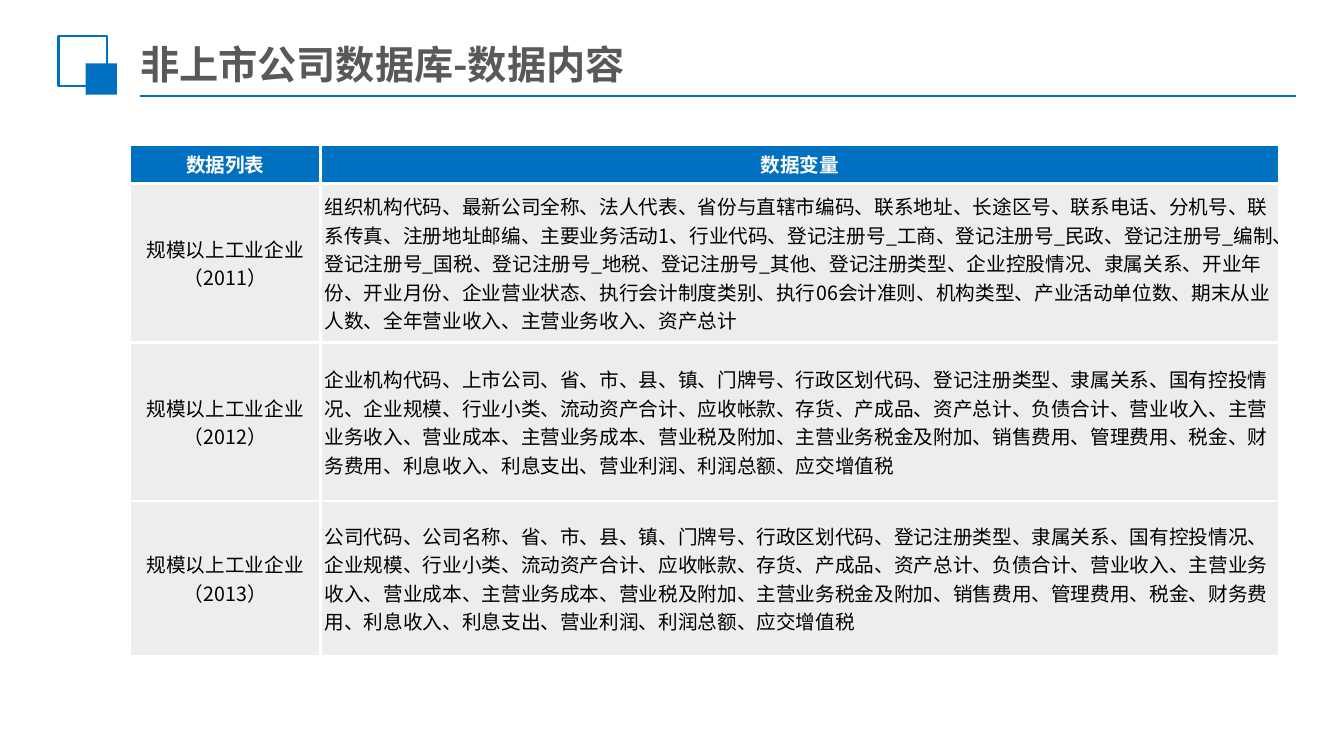
from lxml import etree
from pptx import Presentation, util as u
from pptx.dml.color import RGBColor
from pptx.enum import shapes, text
from pptx.oxml.ns import qn

COLORS = {"blue": "0070C0", "title": "595959", "body": "000000",
          "white": "FFFFFF", "band": "EDEDED"}
FONT = "Noto Sans CJK SC"


def style(paragraph, size, color, bold):
    for run in paragraph.runs:
        run.font.size = u.Pt(size)
        run.font.bold = bold
        run.font.name = FONT
        run.font.color.rgb = RGBColor.from_string(COLORS[color])
        latin = run._r.get_or_add_rPr().find(qn("a:latin"))
        east_asian = etree.Element(qn("a:ea"), typeface=FONT)
        latin.addnext(east_asian)


def white_borders(cell):
    props = cell._tc.get_or_add_tcPr()
    for place, side in enumerate(("lnL", "lnR", "lnT", "lnB")):
        border = etree.Element(qn("a:" + side), w=str(u.Pt(2.25)))
        fill = etree.SubElement(border, qn("a:solidFill"))
        etree.SubElement(fill, qn("a:srgbClr"), val=COLORS["white"])
        props.insert(place, border)


prs = Presentation()
prs.slide_width, prs.slide_height = u.Inches(13.33), u.Inches(7.5)
slide = prs.slides.add_slide(prs.slide_layouts[5])

rule = slide.shapes.add_connector(shapes.MSO_CONNECTOR.STRAIGHT, u.Inches(1.39),
                                  u.Inches(0.95), u.Inches(12.85), u.Inches(0.95))
rule.line.color.rgb = RGBColor.from_string(COLORS["blue"])
rule.line.width = u.Pt(1.25)
etree.SubElement(rule._element.spPr, qn("a:effectLst"))

for left, top, width, height, filled in ((0.58, 0.36, 0.48, 0.49, False),
                                         (0.85, 0.63, 0.31, 0.31, True)):
    square = slide.shapes.add_shape(shapes.MSO_SHAPE.RECTANGLE, u.Inches(left),
                                    u.Inches(top), u.Inches(width), u.Inches(height))
    square.shadow.inherit = False
    if filled:
        square.fill.solid()
        square.fill.fore_color.rgb = RGBColor.from_string(COLORS["blue"])
        square.line.fill.background()
    else:
        square.fill.background()
        square.line.color.rgb = RGBColor.from_string(COLORS["blue"])
        square.line.width = u.Pt(1.5)

title = slide.shapes.title
title.left, title.top = u.Inches(1.32), u.Inches(0.39)
title.width, title.height = u.Inches(8.6), u.Inches(0.48)
heading = title.text_frame
heading.text = "非上市公司数据库-数据内容"
heading.word_wrap = True
heading.auto_size = text.MSO_AUTO_SIZE.NONE
heading.vertical_anchor = text.MSO_ANCHOR.MIDDLE
heading.margin_left = heading.margin_right = u.Inches(0.07)
heading.margin_top = heading.margin_bottom = u.Inches(0.04)
heading.paragraphs[0].alignment = text.PP_ALIGN.LEFT
style(heading.paragraphs[0], 28, "title", True)

shared_variables = (
    "省、市、县、镇、门牌号、行政区划代码、登记注册类型、隶属关系、国有控投情况、"
    "企业规模、行业小类、流动资产合计、应收帐款、存货、产成品、资产总计、负债合计、"
    "营业收入、主营业务收入、营业成本、主营业务成本、营业税及附加、主营业务税金及附加、"
    "销售费用、管理费用、税金、财务费用、利息收入、利息支出、营业利润、利润总额、应交增值税")
datasets = [
    ("数据列表", "数据变量"),
    ("规模以上工业企业（2011）",
     "组织机构代码、最新公司全称、法人代表、省份与直辖市编码、联系地址、长途区号、"
     "联系电话、分机号、联系传真、注册地址邮编、主要业务活动1、行业代码、"
     "登记注册号_工商、登记注册号_民政、登记注册号_编制、登记注册号_国税、"
     "登记注册号_地税、登记注册号_其他、登记注册类型、企业控股情况、隶属关系、"
     "开业年份、开业月份、企业营业状态、执行会计制度类别、执行06会计准则、机构类型、"
     "产业活动单位数、期末从业人数、全年营业收入、主营业务收入、资产总计"),
    ("规模以上工业企业（2012）", "企业机构代码、上市公司、" + shared_variables),
    ("规模以上工业企业（2013）", "公司代码、公司名称、" + shared_variables),
]
column_widths = (1.89, 9.51)
row_heights = (0.39, 1.58, 1.57, 1.54)

table = slide.shapes.add_table(len(datasets), len(column_widths), u.Inches(1.29),
                               u.Inches(1.43), u.Inches(sum(column_widths)),
                               u.Inches(sum(row_heights))).table
for column, width in zip(table.columns, column_widths):
    column.width = u.Inches(width)
for row, height in zip(table.rows, row_heights):
    row.height = u.Inches(height)

for r, dataset in enumerate(datasets):
    header = r == 0
    for c, content in enumerate(dataset):
        cell = table.cell(r, c)
        cell.text = content
        cell.vertical_anchor = text.MSO_ANCHOR.MIDDLE
        cell.margin_left = cell.margin_right = u.Inches(0.04)
        cell.margin_top = cell.margin_bottom = 0
        cell.fill.solid()
        cell.fill.fore_color.rgb = RGBColor.from_string(
            COLORS["blue" if header else "band"])
        white_borders(cell)
        paragraph = cell.text_frame.paragraphs[0]
        centred = header or c == 0
        paragraph.alignment = text.PP_ALIGN.CENTER if centred else text.PP_ALIGN.LEFT
        style(paragraph, 14, "white" if header else "body", header)

prs.save("out.pptx")
